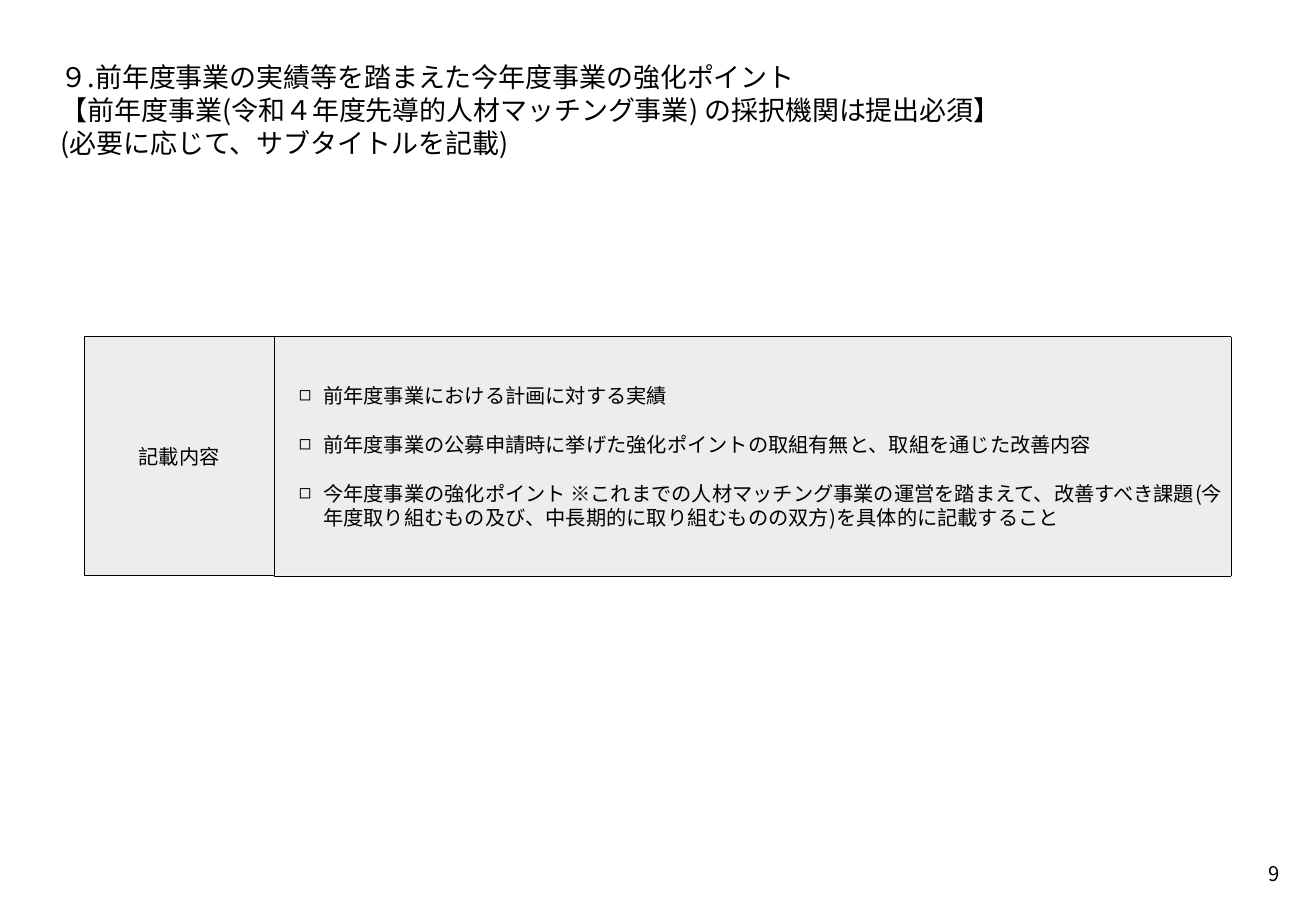
from dataclasses import dataclass

from lxml import etree
from pptx import Presentation
from pptx.dml.color import RGBColor
from pptx.enum import dml, shapes, text
from pptx.oxml import ns
from pptx.util import Inches, Pt


@dataclass(frozen=True)
class Theme:
    font: str = "Noto Sans CJK JP"
    ink: RGBColor = RGBColor(0x00, 0x00, 0x00)
    panel: RGBColor = RGBColor(0xED, 0xED, 0xED)
    title_size: int = 16
    body_size: int = 12
    border: float = 0.25
    line_height: float = 1.21
    bullet: str = "◻"
    bullet_indent: float = 0.2


TITLE = [
    "９.前年度事業の実績等を踏まえた今年度事業の強化ポイント",
    "【前年度事業(令和４年度先導的人材マッチング事業) の採択機関は提出必須】",
    "(必要に応じて、サブタイトルを記載)",
]
ITEMS = [
    "前年度事業における計画に対する実績",
    "前年度事業の公募申請時に挙げた強化ポイントの取組有無と、取組を通じた改善内容",
    "今年度事業の強化ポイント ※これまでの人材マッチング事業の運営を踏まえて、改善すべき課題"
    "(今年度取り組むもの及び、中長期的に取り組むものの双方)を具体的に記載すること",
]
PANEL_TOP, PANEL_HEIGHT = 2.77, 1.97
LABEL_LEFT, LABEL_WIDTH, LIST_WIDTH = 0.69, 1.57, 7.87


def add_bullet(paragraph, theme):
    properties = paragraph._p.get_or_add_pPr()
    indent = Inches(theme.bullet_indent)
    properties.set("marL", str(indent))
    properties.set("indent", str(-indent))
    etree.SubElement(properties, ns.qn("a:buChar")).set("char", theme.bullet)


def write(frame, lines, theme, size, align=text.PP_ALIGN.LEFT,
          anchor=text.MSO_ANCHOR.TOP, insets=(0.1, 0.1, 0.1, 0.1),
          wrap=True, gap=0, bulleted=False):
    """Fill a text frame with one paragraph per line; insets run left, top, right, bottom."""
    frame.auto_size = text.MSO_AUTO_SIZE.NONE
    frame.word_wrap = wrap
    frame.vertical_anchor = anchor
    (frame.margin_left, frame.margin_top,
     frame.margin_right, frame.margin_bottom) = map(Inches, insets)
    for index, line in enumerate(lines):
        paragraph = frame.add_paragraph() if index else frame.paragraphs[0]
        paragraph.alignment = align
        paragraph.line_spacing = Pt(size * theme.line_height)
        paragraph.space_before = Pt(gap if index else 0)
        paragraph.space_after = Pt(0)
        if bulleted:
            add_bullet(paragraph, theme)
        run = paragraph.add_run()
        run.text = line
        run.font.size = Pt(size)
        run.font.name = theme.font
        run.font.color.rgb = theme.ink
        east_asian = etree.SubElement(run._r.get_or_add_rPr(), ns.qn("a:ea"))
        east_asian.set("typeface", theme.font)


class SlideBuilder:
    def __init__(self, slide, theme):
        self.slide = slide
        self.theme = theme

    def place(self, shape, box):
        shape.left, shape.top, shape.width, shape.height = map(Inches, box)

    def paint_panel(self, shape):
        shape.fill.solid()
        shape.fill.fore_color.rgb = self.theme.panel
        shape.line.color.rgb = self.theme.ink
        shape.line.width = Pt(self.theme.border)
        shape.line.dash_style = dml.MSO_LINE.ROUND_DOT

    def title(self, lines, box):
        shape = self.slide.shapes.title
        self.place(shape, box)
        write(shape.text_frame, lines, self.theme, self.theme.title_size,
              insets=(0.2, 0.2, 0.08, 0.2))

    def checklist(self, items, box):
        shape = self.slide.placeholders[1]
        self.place(shape, box)
        self.paint_panel(shape)
        size = self.theme.body_size
        write(shape.text_frame, items, self.theme, size,
              anchor=text.MSO_ANCHOR.MIDDLE, insets=(0.2, 0.2, 0.04, 0.2),
              gap=size * self.theme.line_height, bulleted=True)

    def label(self, caption, box):
        shape = self.slide.shapes.add_shape(
            shapes.MSO_SHAPE.RECTANGLE, *map(Inches, box))
        shape.shadow.inherit = False
        self.paint_panel(shape)
        write(shape.text_frame, [caption], self.theme, self.theme.body_size,
              align=text.PP_ALIGN.CENTER, anchor=text.MSO_ANCHOR.MIDDLE)

    def page_number(self, number, box):
        shape = self.slide.shapes.add_textbox(*map(Inches, box))
        write(shape.text_frame, [number], self.theme, self.theme.body_size,
              align=text.PP_ALIGN.RIGHT, wrap=False)


def main():
    presentation = Presentation()
    presentation.slide_width = Inches(10.83)
    presentation.slide_height = Inches(7.5)
    slide = presentation.slides.add_slide(presentation.slide_layouts[1])

    builder = SlideBuilder(slide, Theme())
    builder.title(TITLE, (0.3, 0.3, 10.24, 0.79))
    builder.checklist(
        ITEMS, (LABEL_LEFT + LABEL_WIDTH, PANEL_TOP, LIST_WIDTH, PANEL_HEIGHT))
    builder.label("記載内容", (LABEL_LEFT, PANEL_TOP, LABEL_WIDTH, PANEL_HEIGHT))
    builder.page_number("9", (10.24, 6.99, 0.39, 0.39))
    presentation.save("out.pptx")


if __name__ == "__main__":
    main()
